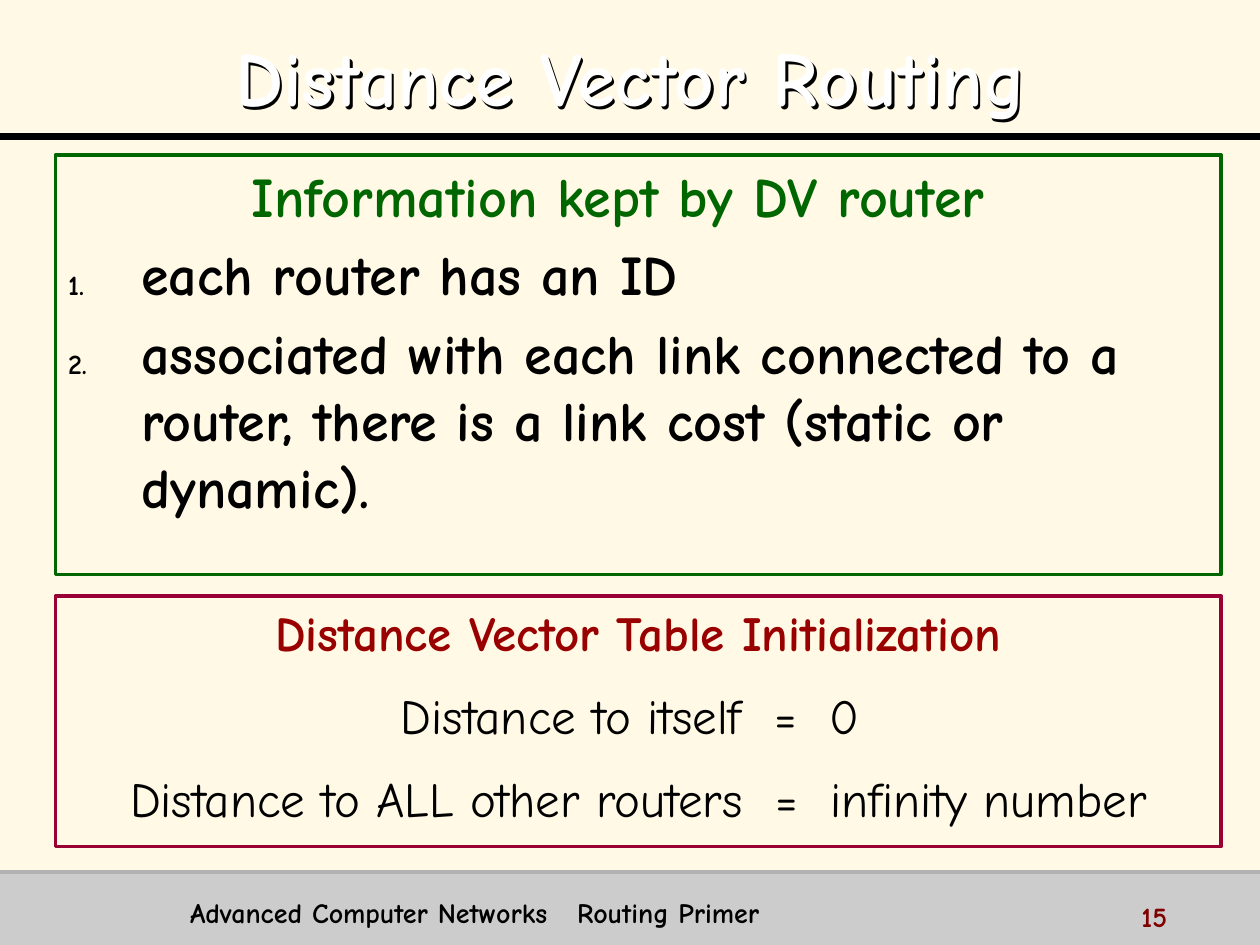
"""Build the Distance Vector Routing slide with its two framed panels and footer."""
import lxml.etree
import pptx
import pptx.dml.color
import pptx.enum.shapes
import pptx.enum.text
import pptx.oxml
import pptx.oxml.ns
import pptx.util

RGB = pptx.dml.color.RGBColor
CREAM = RGB(0xFF, 0xF9, 0xE6)
WHITE = RGB(0xFF, 0xFF, 0xFF)
BLACK = RGB(0, 0, 0)
GREY = RGB(0xCC, 0xCC, 0xCC)
RULE_GREY = RGB(0xB2, 0xB2, 0xB2)
GREEN = RGB(0, 0x66, 0)
RED = RGB(0x99, 0, 0)
CRIMSON = RGB(0x99, 0, 0x33)
MAROON = RGB(0x80, 0, 0)
LEFT, CENTER = pptx.enum.text.PP_ALIGN.LEFT, pptx.enum.text.PP_ALIGN.CENTER
TOP, MIDDLE = pptx.enum.text.MSO_ANCHOR.TOP, pptx.enum.text.MSO_ANCHOR.MIDDLE
NAMESPACE = pptx.oxml.ns.nsdecls("a")
HANGING = pptx.util.Inches(0.58)
NUMBERING = (
    f'<a:buClr {NAMESPACE}><a:srgbClr val="000000"/></a:buClr>',
    f'<a:buSzPct {NAMESPACE} val="50000"/>',
    f'<a:buFont {NAMESPACE} typeface="Comic Neue"/>',
    f'<a:buAutoNum {NAMESPACE} type="arabicPeriod"/>',
)
NO_BULLET = (f"<a:buNone {NAMESPACE}/>",)
SHADE_OFFSET = 0.02

deck = pptx.Presentation()
deck.slide_width, deck.slide_height = pptx.util.Inches(10), pptx.util.Inches(7.5)
slide = deck.slides.add_slide(deck.slide_layouts[1])
slide.background.fill.solid()
slide.background.fill.fore_color.rgb = CREAM


def place(shape, *box):
    shape.left, shape.top, shape.width, shape.height = map(pptx.util.Inches, box)
    return shape


def write(shape, text, size=16, color=BLACK, bold=True, align=LEFT, anchor=TOP,
          before=0, spacing=None, bullets=NO_BULLET, hanging=0, first=True):
    frame = shape.text_frame
    frame.word_wrap = True
    frame.auto_size = pptx.enum.text.MSO_AUTO_SIZE.NONE
    frame.vertical_anchor = anchor
    paragraph = frame.paragraphs[0] if first else frame.add_paragraph()
    properties = paragraph._p.get_or_add_pPr()
    properties.set("marL", str(hanging))
    properties.set("indent", str(-hanging))
    for bullet in bullets:
        properties.append(pptx.oxml.parse_xml(bullet))
    paragraph.alignment = align
    paragraph.space_before = pptx.util.Pt(0 if first else before)
    if spacing:
        paragraph.line_spacing = spacing
    run = paragraph.add_run()
    run.text = text
    run.font.size, run.font.bold = pptx.util.Pt(size), bold
    run.font.color.rgb = color
    run.font.name = "Comic Neue"


footer_band = place(slide.shapes.add_shape(
    pptx.enum.shapes.MSO_SHAPE.RECTANGLE, 0, 0, 0, 0), 0, 6.92, 10, 0.58)
footer_band.shadow.inherit = False
footer_band.fill.solid()
footer_band.fill.fore_color.rgb = GREY
footer_band.line.fill.background()

for height, color, weight in ((1.08, BLACK, 4), (6.92, RULE_GREY, 2)):
    level = pptx.util.Inches(height)
    rule = slide.shapes.add_connector(
        pptx.enum.shapes.MSO_CONNECTOR.STRAIGHT, 0, level, deck.slide_width, level)
    rule.line.color.rgb, rule.line.width = color, pptx.util.Pt(weight)
    lxml.etree.SubElement(rule._element.spPr, pptx.oxml.ns.qn("a:effectLst"))

heading = slide.shapes.title
heading_shade = slide.shapes.add_textbox(0, 0, 0, 0)
heading._element.addprevious(heading_shade._element)
for layer, offset, color in ((heading_shade, SHADE_OFFSET, BLACK), (heading, 0, WHITE)):
    place(layer, 0.2 + offset, 0.13 + offset, 9.61, 0.87)
    write(layer, "Distance Vector Routing", size=44, color=color,
          align=CENTER, anchor=MIDDLE, spacing=1.1)

router_facts = place(slide.placeholders[1], 0.44, 1.23, 9.25, 3.33)
initialization = place(slide.shapes.add_shape(
    pptx.enum.shapes.MSO_SHAPE.RECTANGLE, 0, 0, 0, 0), 0.44, 4.73, 9.25, 1.99)
initialization.shadow.inherit = False
for panel, color in ((router_facts, GREEN), (initialization, CRIMSON)):
    panel.fill.background()
    panel.line.color.rgb, panel.line.width = color, pptx.util.Pt(2)

write(router_facts, "Information kept by DV router  ", size=32, color=GREEN,
      align=CENTER, hanging=HANGING)
for fact in ("each router has an ID",
             "associated with each link connected to a router, "
             "there is a link cost (static or dynamic)."):
    write(router_facts, fact, size=32, before=6.4, bullets=NUMBERING,
          hanging=HANGING, first=False)

write(initialization, "Distance Vector Table Initialization", size=28, color=RED,
      align=CENTER)
for distance in ("Distance to itself  =  0 ",
                 "Distance to ALL other routers  =  infinity number"):
    write(initialization, distance, size=28, bold=False, align=CENTER, before=14,
          first=False)

for text, box, color in (
        ("Advanced Computer Networks   Routing Primer", (1.41, 7.06, 7.28, 0.31), BLACK),
        ("15", (8.96, 7.09, 1, 0.25), MAROON)):
    footer = place(slide.shapes.add_textbox(0, 0, 0, 0), *box)
    write(footer, text, color=color)

deck.save("out.pptx")
